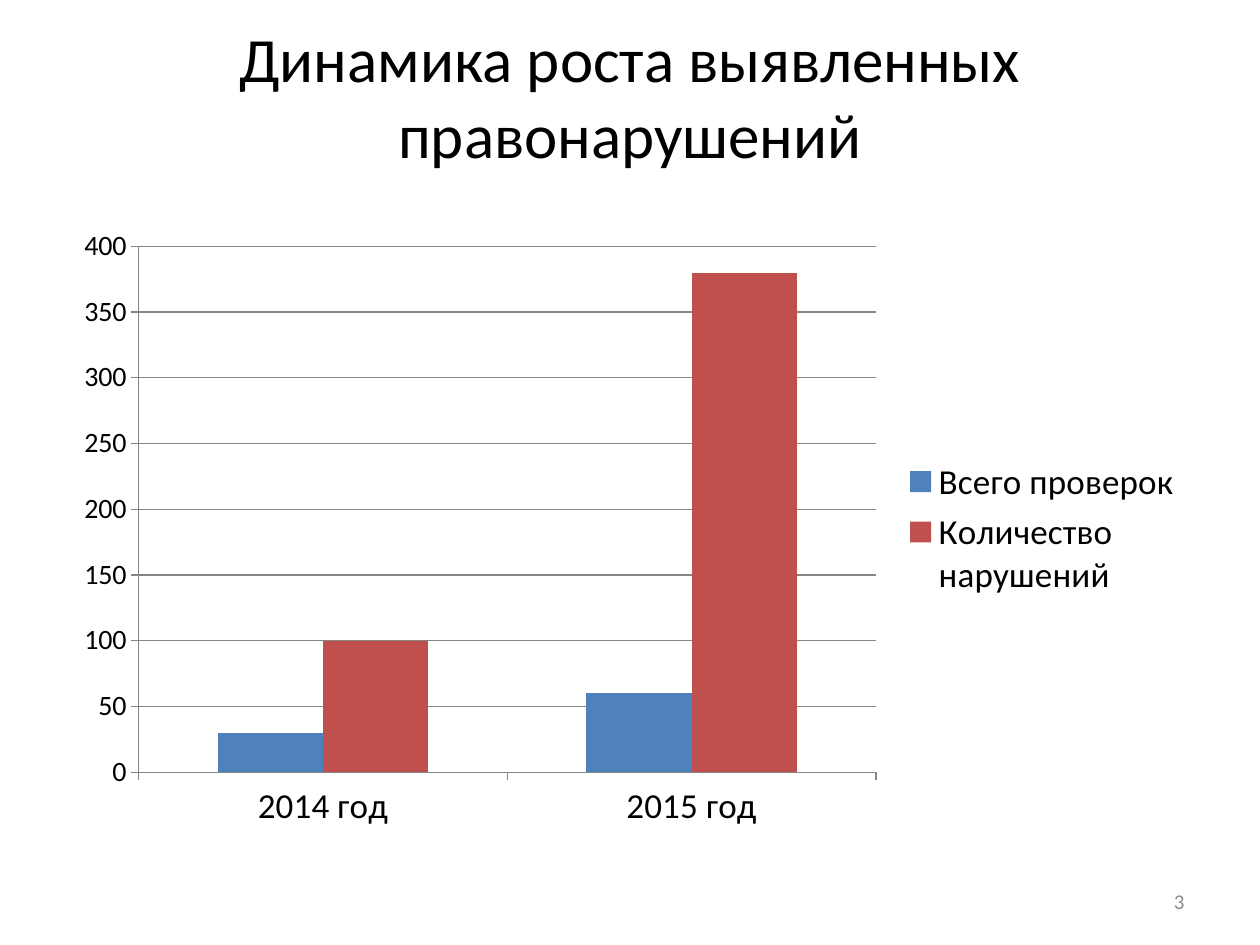
from dataclasses import dataclass

from pptx import Presentation
from pptx.chart.data import CategoryChartData
from pptx.dml.color import RGBColor
from pptx.enum import chart as ch, text
from pptx.util import Inches, Pt

FONT = "Calibri"
COLORS = {"text": "000000", "number": "8C8C8C", "axis": "868686",
          "checks": "4F81BD", "violations": "C0504D"}


@dataclass
class Series:
    name: str
    values: tuple[int, ...]
    color: str


YEARS = ("2014 год", "2015 год")
SERIES = (Series("Всего проверок", (30, 60), "checks"),
          Series("Количество нарушений", (100, 380), "violations"))


def rgb(name: str) -> RGBColor:
    return RGBColor.from_string(COLORS[name])


def style_font(font, size: float, color: str = "text") -> None:
    font.name = FONT
    font.size = Pt(size)
    font.color.rgb = rgb(color)


def write(sp, content: str, size: float, color: str, align) -> None:
    """Put one formatted, vertically centred paragraph into a shape."""
    tf = sp.text_frame
    tf.text = content
    tf.word_wrap = True
    tf.vertical_anchor = text.MSO_ANCHOR.MIDDLE
    p = tf.paragraphs[0]
    p.alignment = align
    style_font(p.runs[0].font, size, color)


def style_axis(axis, size: float) -> None:
    style_font(axis.tick_labels.font, size)
    axis.major_tick_mark = ch.XL_TICK_MARK.OUTSIDE
    axis.minor_tick_mark = ch.XL_TICK_MARK.NONE
    axis.format.line.color.rgb = rgb("axis")
    axis.format.line.width = Pt(0.75)


def add_violations_chart(s) -> None:
    data = CategoryChartData()
    data.categories = YEARS
    for item in SERIES:
        data.add_series(item.name, item.values)
    chart = s.shapes.add_chart(
        ch.XL_CHART_TYPE.COLUMN_CLUSTERED, Inches(0.49), Inches(1.72),
        Inches(9), Inches(4.95), data).chart
    style_font(chart.font, 10)
    chart.has_title = False

    plot = chart.plots[0]
    plot.gap_width = 150
    plot.overlap = 0
    plot.vary_by_categories = False
    for series, item in zip(plot.series, SERIES):
        series.format.fill.solid()
        series.format.fill.fore_color.rgb = rgb(item.color)

    style_axis(chart.category_axis, 20)
    style_axis(chart.value_axis, 16)
    chart.value_axis.minimum_scale = 0
    chart.value_axis.maximum_scale = 400
    chart.value_axis.major_unit = 50
    grid = chart.value_axis.major_gridlines.format.line
    grid.color.rgb = rgb("axis")
    grid.width = Pt(0.75)

    chart.has_legend = True
    chart.legend.position = ch.XL_LEGEND_POSITION.RIGHT
    chart.legend.include_in_layout = False
    style_font(chart.legend.font, 20)


def main() -> None:
    prs = Presentation()
    prs.slide_width, prs.slide_height = Inches(10), Inches(7.5)
    s = prs.slides.add_slide(prs.slide_layouts[5])

    title = s.shapes.title
    title.left, title.top = Inches(0.5), Inches(0.13)
    title.width, title.height = Inches(9), Inches(1.25)
    write(title, "Динамика роста выявленных правонарушений", 36, "text",
          text.PP_ALIGN.CENTER)

    number = s.shapes.add_textbox(Inches(7.17), Inches(6.95),
                                  Inches(2.33), Inches(0.4))
    write(number, "3", 12, "number", text.PP_ALIGN.RIGHT)

    add_violations_chart(s)
    prs.save("out.pptx")


if __name__ == "__main__":
    main()
